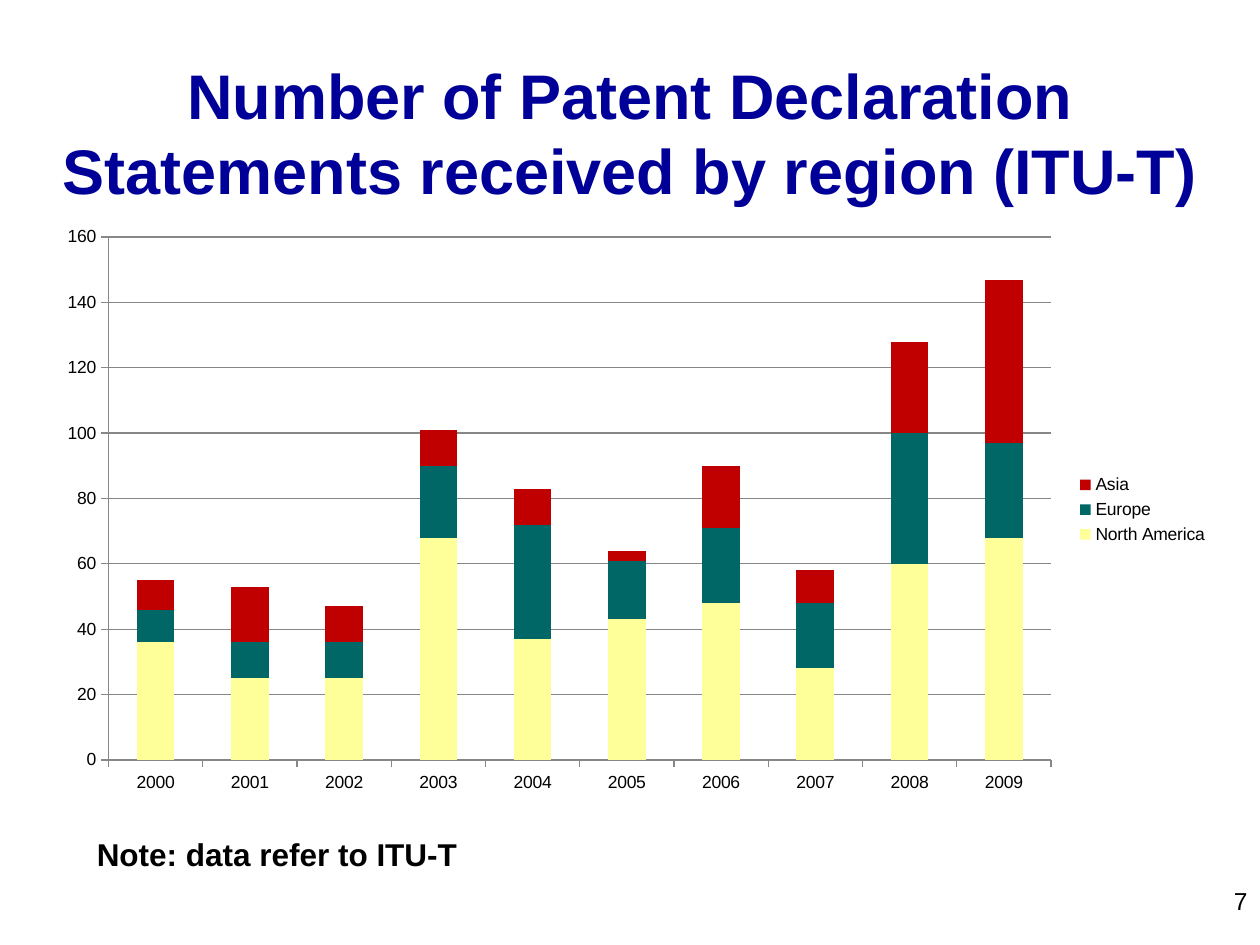
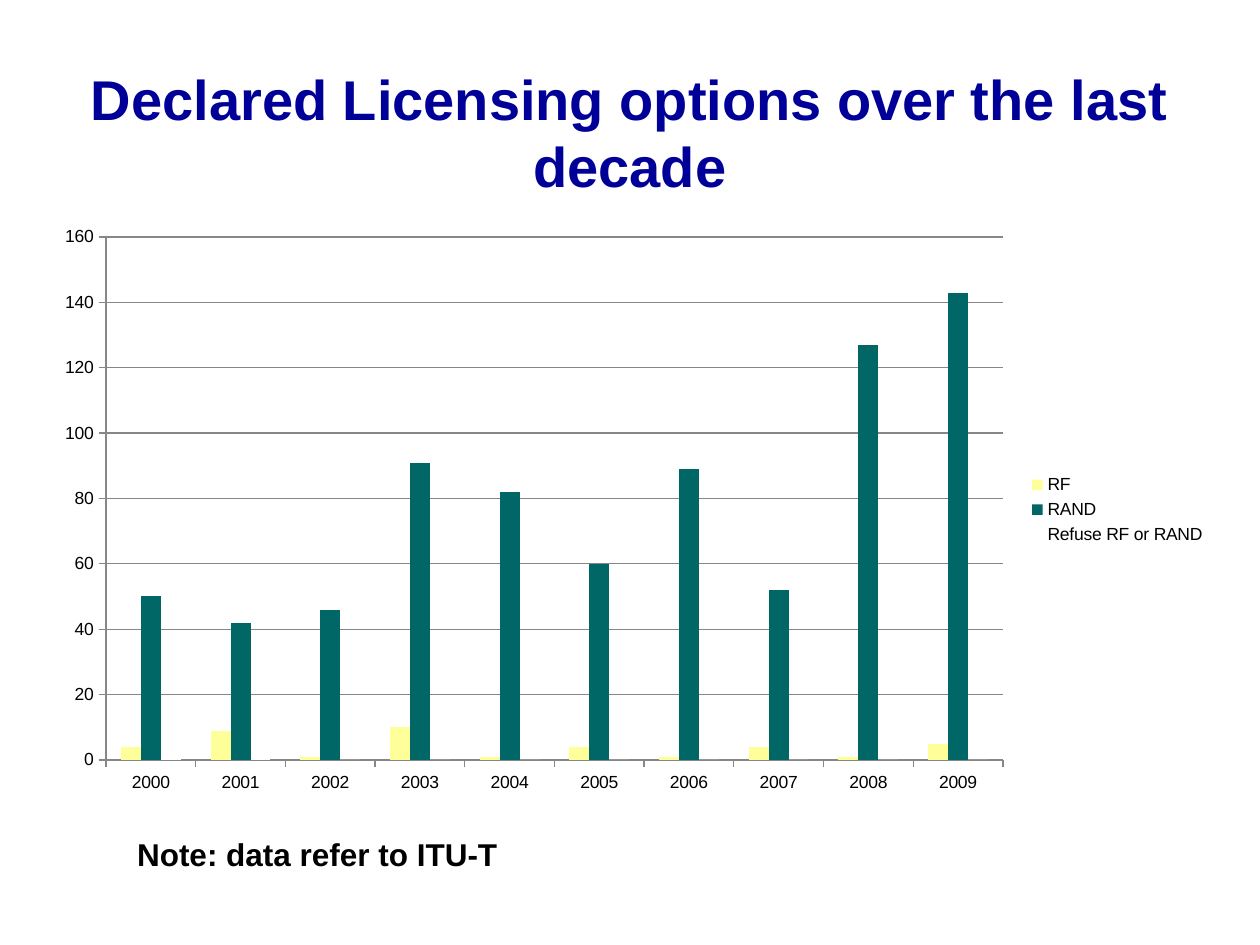
from pptx import Presentation
from pptx.chart.data import CategoryChartData
from pptx.dml.color import RGBColor
from pptx.enum.chart import XL_CHART_TYPE, XL_LEGEND_POSITION, XL_TICK_MARK
from pptx.enum.text import MSO_ANCHOR, PP_ALIGN
from pptx.util import Inches, Pt

FONT = "Arial"
NAVY, BLACK, GREY = "000099", "000000", "878787"
YELLOW, TEAL, RED, WHITE = "FFFF99", "006666", "C00000", "FFFFFF"
YEARS = [str(year) for year in range(2000, 2010)]
CONTENT_WIDTH = 9.34

REGIONS = [
    ("North America", [36, 25, 25, 68, 37, 43, 48, 28, 60, 68], YELLOW),
    ("Europe", [10, 11, 11, 22, 35, 18, 23, 20, 40, 29], TEAL),
    ("Asia", [9, 17, 11, 11, 11, 3, 19, 10, 28, 50], RED),
]
LICENSING = [
    ("RF", [4, 9, 1, 10, 1, 4, 1, 4, 1, 5], YELLOW),
    ("RAND", [50, 42, 46, 91, 82, 60, 89, 52, 127, 143], TEAL),
    ("Refuse RF or RAND", [1, 3, 0, 0, 0, 0, 0, 0, 0, 0], WHITE),
]


def color(hex_code):
    """Turn a hex string into a colour."""
    return RGBColor.from_string(hex_code)


def add_text(slide, words, box, size, ink=BLACK, bold=False,
             align=PP_ALIGN.LEFT, anchor=MSO_ANCHOR.TOP, wrap=True):
    """Add one line or paragraph of text in a box given in inches."""
    frame = slide.shapes.add_textbox(*map(Inches, box)).text_frame
    frame.word_wrap = wrap
    frame.vertical_anchor = anchor
    paragraph = frame.paragraphs[0]
    paragraph.alignment = align
    run = paragraph.add_run()
    run.text = words
    run.font.name, run.font.size, run.font.bold = FONT, Pt(size), bold
    run.font.color.rgb = color(ink)


def add_title(slide, words, size):
    """Add the centred slide title."""
    add_text(slide, words, (0.33, 0.42, CONTENT_WIDTH, 1.25), size, NAVY, True,
             PP_ALIGN.CENTER, MSO_ANCHOR.MIDDLE)


def add_note(slide, left):
    """Add the note on the data below the chart."""
    add_text(slide, "Note: data refer to ITU-T", (left, 6.58, 3.06, 0.4), 18,
             bold=True, wrap=False)


def add_page_number(slide, number):
    """Add the page number in the lower right corner."""
    add_text(slide, str(number), (7.67, 6.98, 2.33, 0.52), 14, align=PP_ALIGN.RIGHT)


def style_line(line):
    """Give an axis or grid line its thin grey stroke."""
    line.color.rgb = color(GREY)
    line.width = Pt(0.75)


def add_yearly_columns(slide, kind, series, left, overlap):
    """Add a column chart with one category for each year."""
    data = CategoryChartData(number_format="0")
    data.categories = YEARS
    for name, values, _ in series:
        data.add_series(name, values)
    box = map(Inches, (left, 1.71, CONTENT_WIDTH, 4.67))
    chart = slide.shapes.add_chart(kind, *box, data).chart
    chart.has_title = False
    chart.font.name, chart.font.size = FONT, Pt(10)
    chart.font.color.rgb = color(BLACK)

    chart.has_legend = True
    chart.legend.position = XL_LEGEND_POSITION.RIGHT
    chart.legend.include_in_layout = False

    for axis in (chart.category_axis, chart.value_axis):
        axis.major_tick_mark = XL_TICK_MARK.OUTSIDE
        style_line(axis.format.line)
    chart.value_axis.minimum_scale = 0
    chart.value_axis.maximum_scale = 160
    chart.value_axis.major_unit = 20
    chart.value_axis.has_major_gridlines = True
    style_line(chart.value_axis.major_gridlines.format.line)

    plot = chart.plots[0]
    plot.vary_by_categories = False
    plot.gap_width, plot.overlap = 150, overlap
    for columns, (_, _, fill) in zip(plot.series, series):
        columns.invert_if_negative = False
        columns.format.fill.solid()
        columns.format.fill.fore_color.rgb = color(fill)


def main():
    """Build both slides and save the deck."""
    deck = Presentation()
    deck.slide_width, deck.slide_height = Inches(10), Inches(7.5)
    blank = deck.slide_layouts[6]

    by_region = deck.slides.add_slide(blank)
    add_title(by_region, "Number of Patent Declaration Statements received by region (ITU-T)", 36)
    add_page_number(by_region, 7)
    add_yearly_columns(by_region, XL_CHART_TYPE.COLUMN_STACKED, REGIONS, 0.35, 100)
    add_note(by_region, 0.67)

    by_license = deck.slides.add_slide(blank)
    add_title(by_license, "Declared Licensing options over the last decade", 32)
    add_yearly_columns(by_license, XL_CHART_TYPE.COLUMN_CLUSTERED, LICENSING, 0.33, 0)
    add_note(by_license, 0.99)

    deck.save("out.pptx")


if __name__ == "__main__":
    main()
